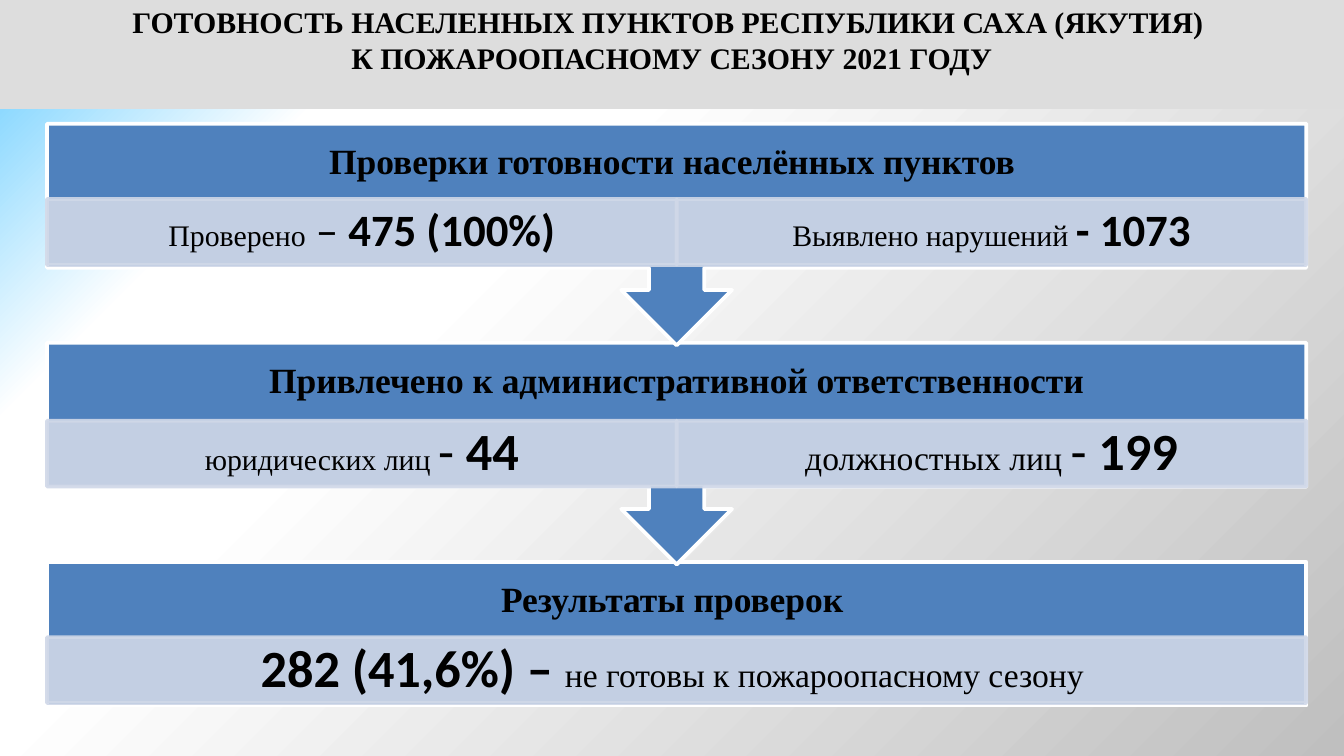
from dataclasses import dataclass

from lxml import etree
from pptx import Presentation
from pptx.dml.color import RGBColor
from pptx.enum.shapes import MSO_SHAPE
from pptx.enum.text import MSO_ANCHOR, MSO_AUTO_SIZE, PP_ALIGN
from pptx.oxml import parse_xml
from pptx.oxml.ns import nsdecls, qn
from pptx.util import Pt

RECT, CALLOUT = MSO_SHAPE.RECTANGLE, MSO_SHAPE.DOWN_ARROW_CALLOUT
CENTER, TOP, MIDDLE = PP_ALIGN.CENTER, MSO_ANCHOR.TOP, MSO_ANCHOR.MIDDLE
NO_FIT = MSO_AUTO_SIZE.NONE


@dataclass(frozen=True)
class Theme:
    serif: str = "Times New Roman"
    sans: str = "Calibri"
    text: str = "000000"
    banner: str = "DDDDDD"
    block: str = "4F81BD"
    cell: str = "D0D8E8"
    outline: str = "FFFFFF"
    cell_opacity: int = 90
    backdrop: tuple = ((0, "66CCFF"), (20, "FFFFFF"), (35, "FFFFFF"), (100, "BFBFBF"))
    title_size: int = 16
    heading_size: int = 19
    label_small: int = 16
    label_large: int = 18
    figure_small: int = 24
    figure_large: int = 28


T = Theme()
WIDTH, HEIGHT = 720, 405
LEFT, FIRST_TOP, STEP = 25.2, 66.24, 117.36
BLOCK_W, BODY_H, CALLOUT_H = 674.64, 77.04, 118.8
HEADING_H, CELL_H = 41.76, 35.28


def label(text, size):
    return text, T.serif, size, False


def figure(text, size, bold=True):
    return text, T.sans, size, bold


# Heading, offset of the cell row, cells as runs
BLOCKS = [
    ("Проверки готовности населённых пунктов ", 40.4, [
        [label("Проверено", T.label_small), figure(" – ", T.figure_small, False),
         figure("475 (100%)", T.figure_small)],
        [label("Выявлено нарушений ", T.label_small), figure("- 1073", T.figure_small)],
    ]),
    ("Привлечено к административной ответственности", 41.76, [
        [label("юридических лиц ", T.label_small), figure("- ", T.figure_large, False),
         figure("44", T.figure_large)],
        [label("должностных лиц ", T.label_large), figure("- ", T.figure_large, False),
         figure("199", T.figure_large)],
    ]),
    ("Результаты проверок ", 40.4, [
        [figure("282 (41,6%) – ", T.figure_large),
         label("не готовы к пожароопасному сезону ", T.label_large)],
    ]),
]


class SlideBuilder:
    def __init__(self, slide, theme):
        self.slide, self.theme = slide, theme

    def background(self):
        """Fill the slide with the diagonal multi-stop gradient."""
        fill = self.slide.background.fill
        fill.gradient()
        stops = "".join(
            f'<a:gs pos="{pos * 1000}"><a:srgbClr val="{color}"/></a:gs>'
            for pos, color in self.theme.backdrop)
        new = parse_xml(f'<a:gradFill {nsdecls("a")} rotWithShape="1"><a:gsLst>{stops}</a:gsLst>'
                        '<a:lin ang="2700000" scaled="0"/></a:gradFill>')
        old = self.slide.background._cSld.find(".//" + qn("a:gradFill"))
        old.getparent().replace(old, new)

    def frame(self, sp, margins, anchor):
        tf = sp.text_frame
        tf.word_wrap, tf.auto_size, tf.vertical_anchor = True, NO_FIT, anchor
        tf.margin_left = tf.margin_right = Pt(margins[0])
        tf.margin_top, tf.margin_bottom = Pt(margins[1]), Pt(margins[2])
        return tf

    def style(self, p, size=None, bold=None, spacing=1.0):
        p.alignment, p.line_spacing, p.space_before = CENTER, spacing, Pt(0)
        p.font.color.rgb = RGBColor.from_string(self.theme.text)
        if size:
            p.font.name, p.font.size, p.font.bold = self.theme.serif, Pt(size), bold

    def title(self, lines, height):
        sp = self.slide.shapes.title
        sp.left, sp.top, sp.width, sp.height = Pt(0), Pt(0), Pt(WIDTH), Pt(height)
        sp.fill.solid()
        sp.fill.fore_color.rgb = RGBColor.from_string(self.theme.banner)
        tf = self.frame(sp, (3.6, 2.2, 2.2), TOP)
        tf.text = "\n".join(lines)
        for p in tf.paragraphs:
            self.style(p, self.theme.title_size, True)

    def box(self, kind, x, y, w, h, fill, line):
        sp = self.slide.shapes.add_shape(kind, Pt(x), Pt(y), Pt(w), Pt(h))
        sp.shadow.inherit = False
        sp.fill.solid()
        sp.fill.fore_color.rgb = RGBColor.from_string(fill)
        sp.line.color.rgb = RGBColor.from_string(line)
        sp.line.width = Pt(2)
        return sp

    def block(self, y, heading, has_arrow):
        kind, h = (CALLOUT, CALLOUT_H) if has_arrow else (RECT, BODY_H)
        sp = self.box(kind, LEFT, y, BLOCK_W, h, self.theme.block, self.theme.outline)
        tf = self.frame(sp, (10.8, 0, BODY_H - HEADING_H), MIDDLE)
        tf.text = heading
        self.style(tf.paragraphs[0], self.theme.heading_size, True, 0.9)

    def cell(self, x, y, w, runs):
        sp = self.box(RECT, x, y, w, CELL_H, self.theme.cell, self.theme.cell)
        for color in sp._element.spPr.iter(qn("a:srgbClr")):
            alpha = etree.SubElement(color, qn("a:alpha"))
            alpha.set("val", str(self.theme.cell_opacity * 1000))
        p = self.frame(sp, (9, 1.8, 1.8), MIDDLE).paragraphs[0]
        self.style(p, spacing=0.9)
        for text, font, size, bold in runs:
            r = p.add_run()
            r.text = text
            r.font.name, r.font.size, r.font.bold = font, Pt(size), bold


def main():
    prs = Presentation()
    prs.slide_width, prs.slide_height = Pt(WIDTH), Pt(HEIGHT)
    s = SlideBuilder(prs.slides.add_slide(prs.slide_layouts[5]), T)
    s.background()
    # Upward order lets each arrow tip lie over the block below it
    for i, (heading, offset, cells) in reversed(list(enumerate(BLOCKS))):
        y = FIRST_TOP + i * STEP
        s.block(y, heading, has_arrow=i < len(BLOCKS) - 1)
        w = BLOCK_W / len(cells)
        for col, runs in enumerate(cells):
            s.cell(LEFT + col * w, y + offset, w, runs)
    s.title(["ГОТОВНОСТЬ НАСЕЛЕННЫХ ПУНКТОВ РЕСПУБЛИКИ САХА (ЯКУТИЯ) ",
             "К ПОЖАРООПАСНОМУ СЕЗОНУ 2021 ГОДУ"], 58.4)
    prs.save("out.pptx")


if __name__ == "__main__":
    main()
